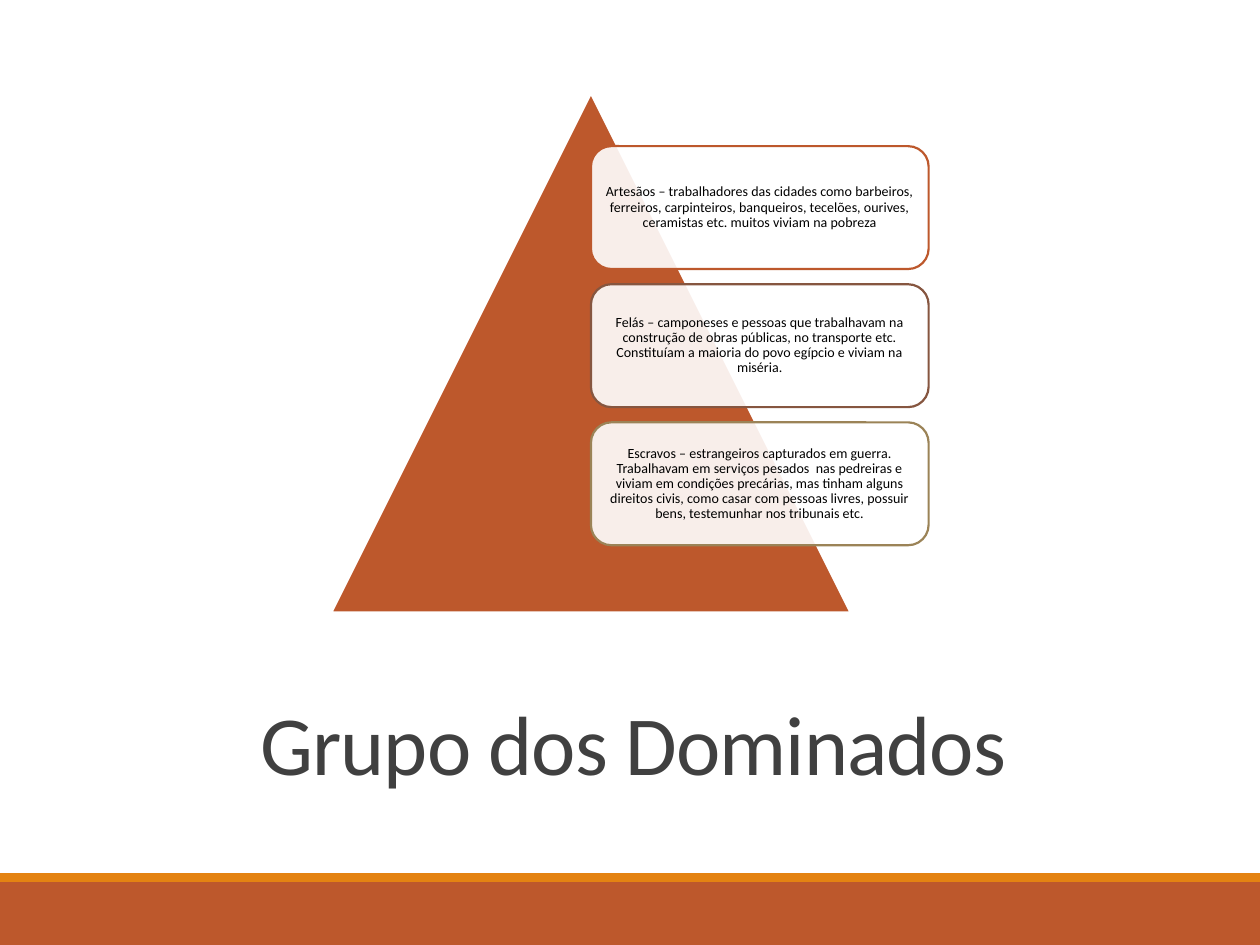
from lxml import etree
from pptx import Presentation
from pptx import util as u
from pptx.dml.color import RGBColor
from pptx.enum import shapes, text
from pptx.oxml.ns import qn

RUST = RGBColor(0xBD, 0x58, 0x2C)
ORANGE = RGBColor(0xE4, 0x83, 0x12)
BROWN = RGBColor(0x86, 0x56, 0x40)
OLIVE = RGBColor(0x9B, 0x83, 0x57)
GREY = RGBColor(0x40, 0x40, 0x40)
BLACK = RGBColor(0, 0, 0)
WHITE = RGBColor(0xFF, 0xFF, 0xFF)

GROUPS = [
    (RUST, "Artesãos – trabalhadores das cidades como barbeiros, ferreiros, "
           "carpinteiros, banqueiros, tecelões, ourives, ceramistas etc. "
           "muitos viviam na pobreza"),
    (BROWN, "Felás – camponeses e pessoas que trabalhavam na construção de "
            "obras públicas, no transporte etc. Constituíam a maioria do povo "
            "egípcio e viviam na miséria."),
    (OLIVE, "Escravos – estrangeiros capturados em guerra. Trabalhavam em "
            "serviços pesados  nas pedreiras e viviam em condições precárias, "
            "mas tinham alguns direitos civis, como casar com pessoas livres, "
            "possuir bens, testemunhar nos tribunais etc."),
]


class SlideBuilder:
    """Places elements on a grid of 100 columns by 75 rows."""

    font = "Calibri"
    columns, rows = 100, 75

    def __init__(self, deck):
        self.deck = deck
        self.page = deck.slides.add_slide(deck.slide_layouts[6])

    def place(self, column, row, width, height):
        cell_w = self.deck.slide_width / self.columns
        cell_h = self.deck.slide_height / self.rows
        return [u.Emu(round(n)) for n in
                (column * cell_w, row * cell_h, width * cell_w, height * cell_h)]

    def shape(self, kind, area, fill, line=None, opacity=100):
        box = self.page.shapes.add_shape(kind, *self.place(*area))
        box.shadow.inherit = False
        box.fill.solid()
        box.fill.fore_color.rgb = fill
        if opacity < 100:
            color = box.element.spPr.find(qn("a:solidFill")).find(qn("a:srgbClr"))
            etree.SubElement(color, qn("a:alpha"), val=str(opacity * 1000))
        if line is None:
            box.line.fill.background()
        else:
            box.line.color.rgb = line
            box.line.width = u.Pt(1.25)
        return box

    def add_words(self, box, words, size, color, leading, after=0, tracking=0):
        frame = box.text_frame
        frame.word_wrap = True
        frame.vertical_anchor = text.MSO_ANCHOR.MIDDLE
        para = frame.paragraphs[0]
        para.alignment = text.PP_ALIGN.CENTER
        para.line_spacing = leading
        para.space_after = u.Pt(after)
        span = para.add_run()
        span.text = words
        span.font.name = self.font
        span.font.size = u.Pt(size)
        span.font.color.rgb = color
        if tracking:
            span._r.get_or_add_rPr().set("spc", str(round(tracking * 100)))

    def title(self, words, area):
        box = self.page.shapes.add_textbox(*self.place(*area))
        self.add_words(box, words, 48, GREY, leading=0.85, tracking=-0.5)

    def card(self, words, area, line):
        box = self.shape(shapes.MSO_SHAPE.ROUNDED_RECTANGLE, area, WHITE, line, 90)
        frame = box.text_frame
        frame.margin_left = frame.margin_right = u.Inches(0.03)
        frame.margin_top = frame.margin_bottom = u.Inches(0.03)
        self.add_words(box, words, 8, BLACK, leading=0.9, after=2.8)


def main():
    deck = Presentation()
    deck.slide_width, deck.slide_height = u.Inches(10), u.Inches(7.5)
    slide = SlideBuilder(deck)

    # Footer bands
    slide.shape(shapes.MSO_SHAPE.RECTANGLE, (0, 70, 100, 5), RUST)
    slide.shape(shapes.MSO_SHAPE.RECTANGLE, (0, 69.3, 100, 0.7), ORANGE)

    # Title
    slide.title("Grupo dos Dominados", (9, 53, 82.5, 13))

    # Pyramid with one card per social group
    slide.shape(shapes.MSO_SHAPE.ISOSCELES_TRIANGLE,
                (26.3, 7.4, 41.2, 41.2), RUST, WHITE)
    top, pitch = 11.6, 10.96
    for index, (line, words) in enumerate(GROUPS):
        slide.card(words, (46.9, top + index * pitch, 26.8, 9.75), line)

    deck.save("out.pptx")


if __name__ == "__main__":
    main()
